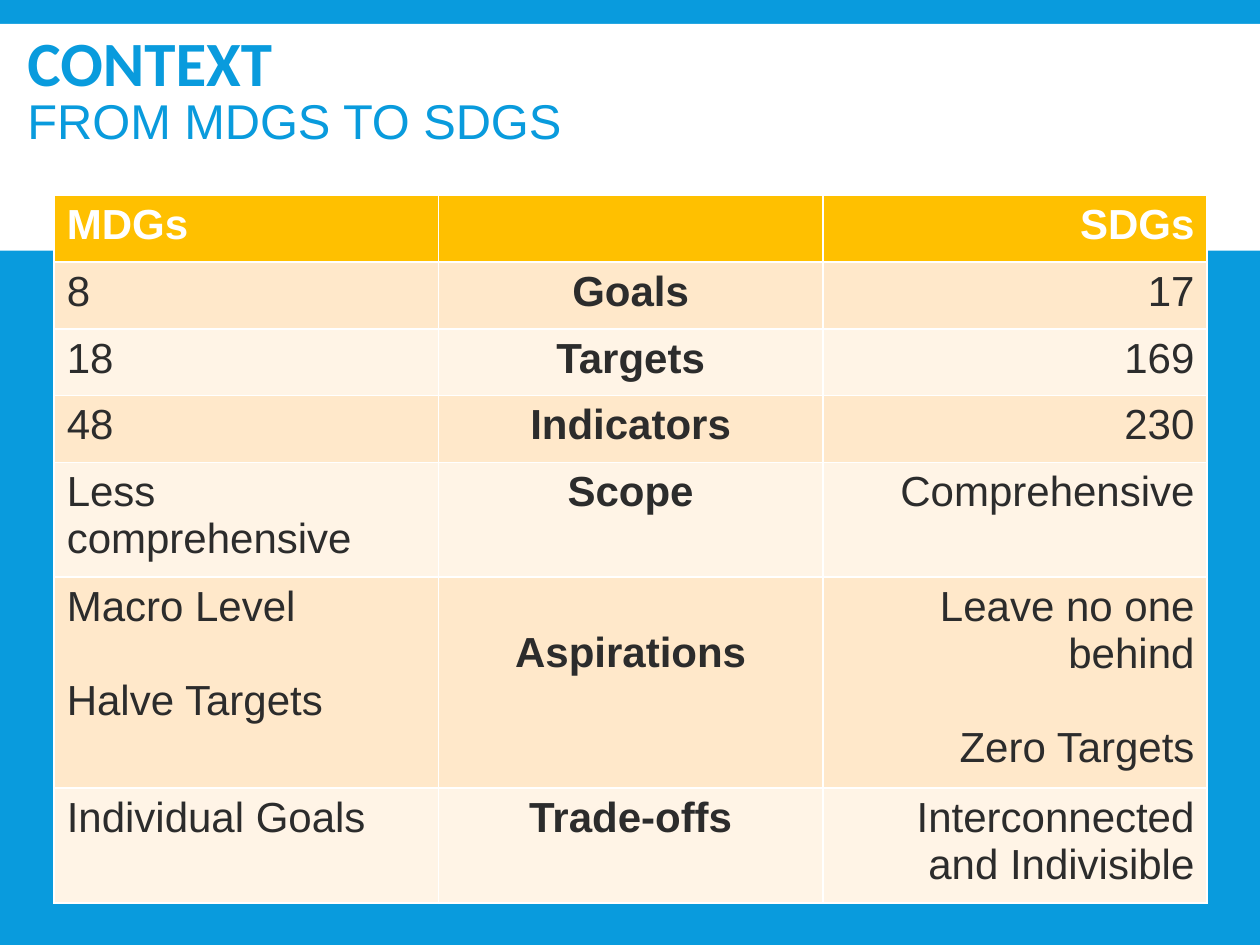
"""Build a slide that compares the MDGs with the SDGs."""
from pptx import Presentation
from pptx.dml.color import RGBColor
from pptx.enum.shapes import MSO_SHAPE as Shape
from pptx.enum.text import MSO_ANCHOR as Anchor, PP_ALIGN as Align
from pptx.util import Inches, Pt

BLUE = RGBColor(0x09, 0x9B, 0xDD)
WHITE = RGBColor(0xFF, 0xFF, 0xFF)
GOLD = RGBColor(0xFF, 0xC0, 0x00)
PEACH = RGBColor(0xFF, 0xE8, 0xCA)
CREAM = RGBColor(0xFF, 0xF4, 0xE6)
DARK = RGBColor(0x2C, 0x2C, 0x2C)

ALIGNMENTS = (Align.LEFT, Align.CENTER, Align.RIGHT)
COLUMN_WIDTH = 3.05
ROWS = (
    (0.53, "MDGs", "", "SDGs"),
    (0.53, "8", "Goals", "17"),
    (0.53, "18", "Targets", "169"),
    (0.53, "48", "Indicators", "230"),
    (0.91, "Less comprehensive", "Scope", "Comprehensive"),
    (1.58, "Macro Level\nHalve Targets", "Aspirations", "Leave no one behind\nZero Targets"),
    (0.91, "Individual Goals", "Trade-offs", "Interconnected and Indivisible"),
)
ASPIRATIONS_ROW = 5


def format_font(font, name, size, color, bold):
    """Set the look of a font."""
    font.name, font.size, font.bold = name, Pt(size), bold
    font.color.rgb = color


def add_title_band(slide):
    """Add the white band behind the title."""
    band = slide.shapes.add_shape(
        Shape.RECTANGLE, Inches(0), Inches(0.19), Inches(10), Inches(1.8))
    band.shadow.inherit = False
    band.fill.solid()
    band.fill.fore_color.rgb = WHITE
    band.line.fill.background()


def add_title(slide):
    """Add the two-line title."""
    box = slide.shapes.add_textbox(Inches(0.12), Inches(0.3), Inches(8.74), Inches(0.87))
    frame = box.text_frame
    frame.word_wrap = True
    frame.vertical_anchor = Anchor.MIDDLE
    para = frame.paragraphs[0]
    para.text = "CONTEXT\vFROM MDGS TO SDGS"
    para.line_spacing = 0.85
    heading, subheading = para.runs
    format_font(heading.font, "Calibri", 36, BLUE, True)
    format_font(subheading.font, "Arial", 27.9, BLUE, False)


def fill_cell(cell, text, fill, color, bold, alignment):
    """Write one table cell, with a gap of one line between paragraphs."""
    cell.fill.solid()
    cell.fill.fore_color.rgb = fill
    cell.text_frame.text = text
    for index, para in enumerate(cell.text_frame.paragraphs):
        para.alignment = alignment
        para.space_before = Pt(27 if index else 0)
        format_font(para.font, "Arial", 24, color, bold)
        for span in para.runs:
            format_font(span.font, "Arial", 24, color, bold)


def add_comparison_table(slide):
    """Add the table with a header and banded rows."""
    frame = slide.shapes.add_table(
        len(ROWS), len(ALIGNMENTS), Inches(0.43), Inches(1.55),
        Inches(COLUMN_WIDTH * len(ALIGNMENTS)), Inches(sum(row[0] for row in ROWS)))
    table = frame.table
    for column in table.columns:
        column.width = Inches(COLUMN_WIDTH)
    for row_index, (height, *texts) in enumerate(ROWS):
        table.rows[row_index].height = Inches(height)
        header = row_index == 0
        fill = GOLD if header else (CREAM, PEACH)[row_index % 2]
        color = WHITE if header else DARK
        for column_index, (text, alignment) in enumerate(zip(texts, ALIGNMENTS)):
            bold = header or alignment == Align.CENTER
            fill_cell(table.cell(row_index, column_index), text, fill, color, bold, alignment)
    table.cell(ASPIRATIONS_ROW, 1).margin_top = Inches(0.42)


def main():
    """Build and save the deck."""
    deck = Presentation()
    deck.slide_width, deck.slide_height = Inches(10), Inches(7.5)
    slide = deck.slides.add_slide(deck.slide_layouts[6])
    slide.background.fill.solid()
    slide.background.fill.fore_color.rgb = BLUE
    add_title_band(slide)
    add_title(slide)
    add_comparison_table(slide)
    deck.save("out.pptx")


if __name__ == "__main__":
    main()
